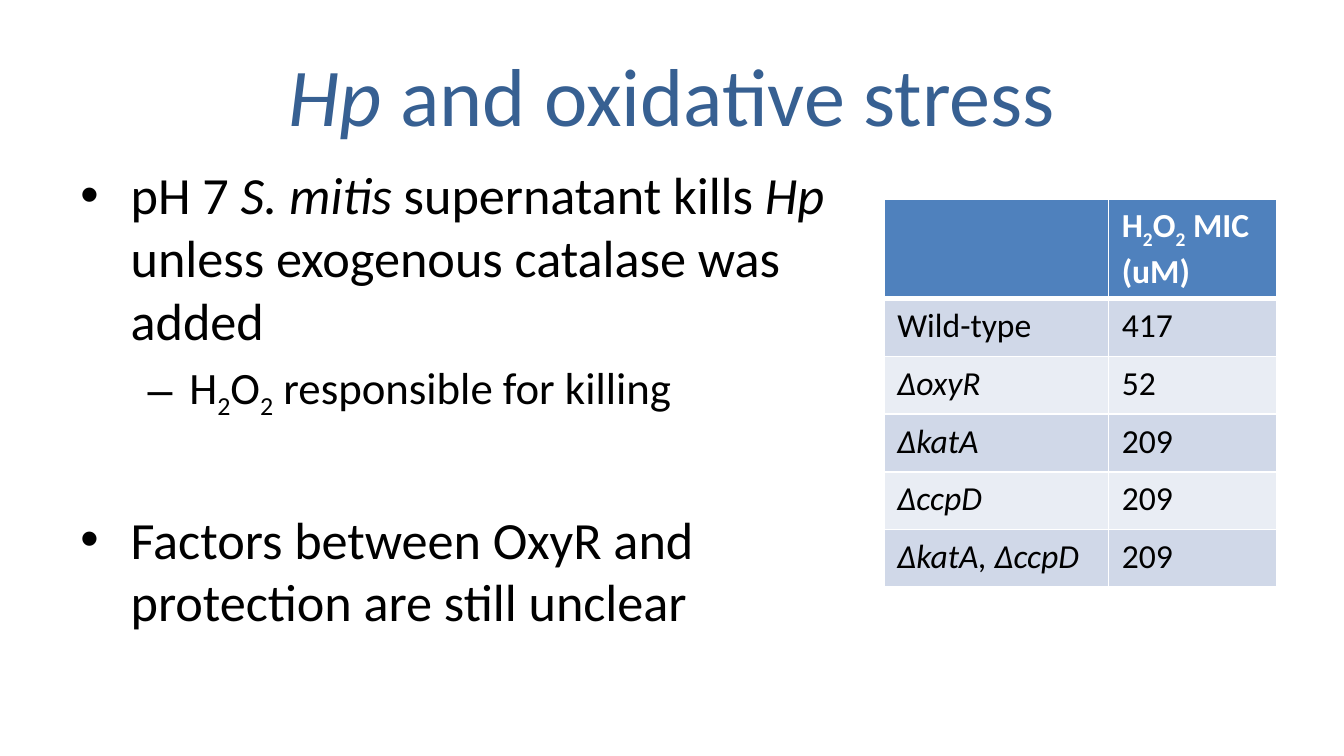
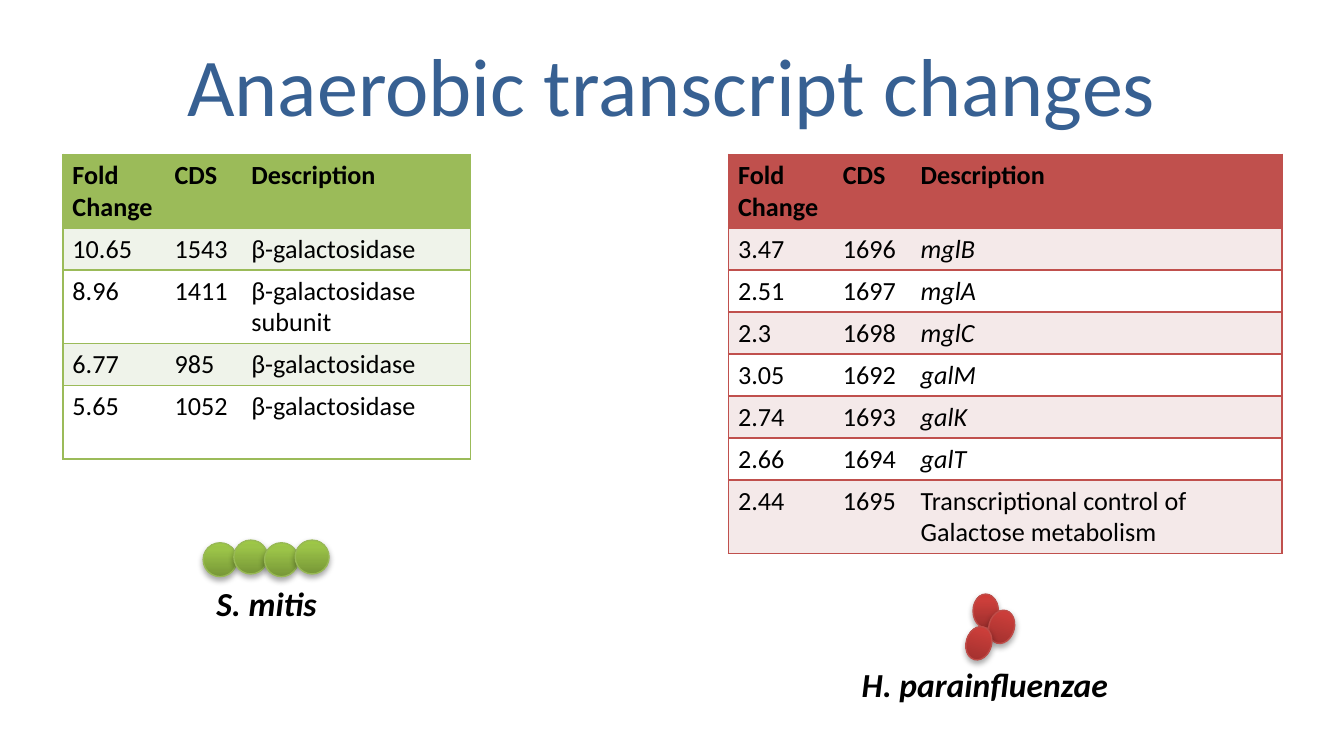
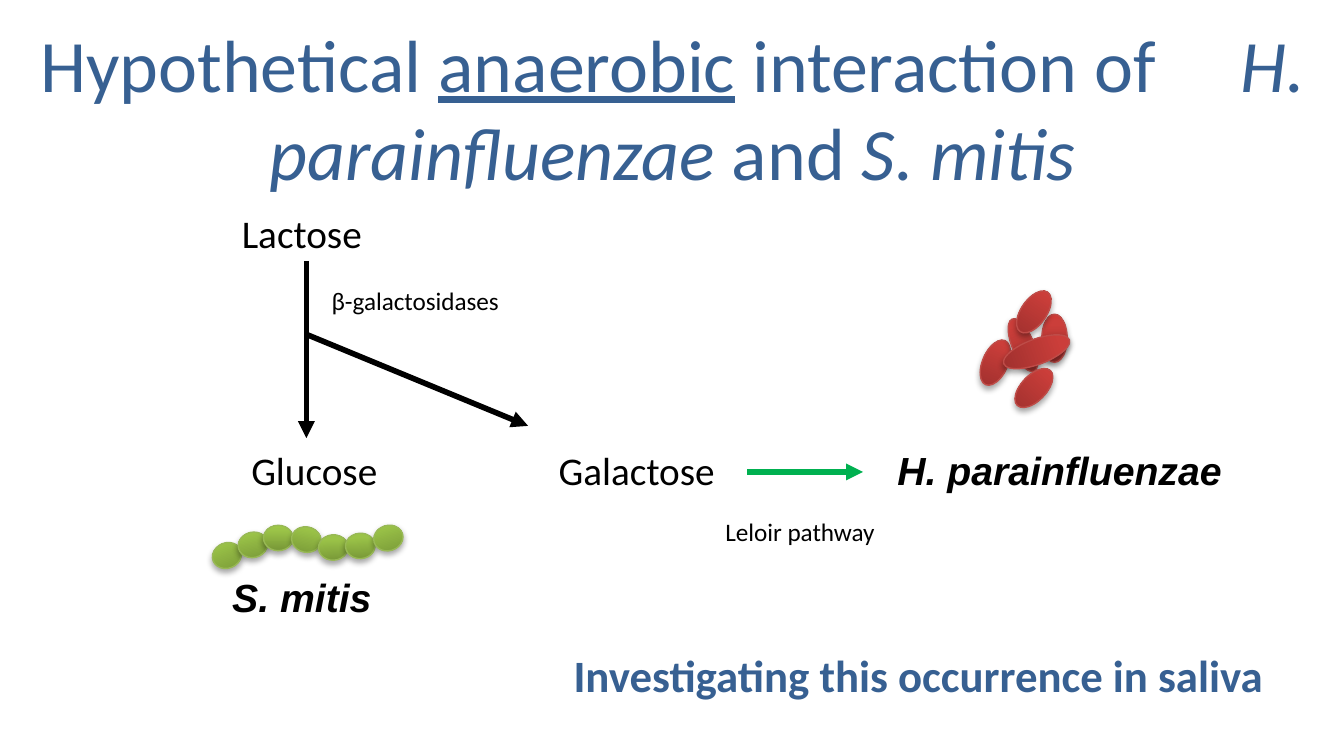
from lxml import etree
from pptx import Presentation
from pptx.dml.color import RGBColor
from pptx.enum.shapes import MSO_CONNECTOR as Connector, MSO_SHAPE as Shape
from pptx.enum.text import MSO_ANCHOR as Anchor, PP_ALIGN as Align
from pptx.oxml import parse_xml
from pptx.oxml.ns import nsdecls, qn
from pptx.util import Cm, Pt

COLORS = {
    "title": "376092", "text": "000000", "white": "FFFFFF", "arrow": "00B050",
    "blue": "4F81BD", "blue_odd": "D0D8E8", "blue_even": "E9EDF4",
    "green": "9BBB59", "green_odd": "EFF3EA",
    "red": "C0504D", "red_odd": "F4E9E9",
}
CELL_PAINT = {
    "green": {"stops": [(0, "779737"), (80, "9BC348"), (100, "9DC746")], "line": "98B955"},
    "red": {"stops": [(0, "9C2F2D"), (80, "CB3E3A"), (100, "CE3B37")], "line": "BF4C48"},
}
SHADOW = (
    f'<a:effectLst {nsdecls("a")}><a:outerShdw blurRad="40000" dist="23000" dir="5400000" '
    'rotWithShape="0"><a:srgbClr val="000000"><a:alpha val="35000"/></a:srgbClr>'
    '</a:outerShdw></a:effectLst>'
)
SUBSCRIPT, WIDE_SPACE = "s", "w"
PEROXIDE = [("H", ""), ("2", SUBSCRIPT), ("O", ""), ("2", SUBSCRIPT)]

STRESS_TITLE = [("Hp ", "i"), ("and oxidative stress", "")]
STRESS_POINTS = [
    {"bullet": "•", "indent": 0.95, "hang": 0.95, "size": 28, "before": 5.6, "runs": [
        ("pH 7 ", ""), ("S. mitis ", "i"), ("supernatant kills ", ""), ("Hp ", "i"),
        ("unless exogenous catalase was added", "")]},
    {"bullet": "–", "indent": 2.06, "hang": 0.79, "size": 24, "before": 4.8,
     "runs": PEROXIDE + [(" responsible for killing", "")]},
    {"bullet": "•", "indent": 0.95, "hang": 0.95, "size": 28, "before": 46, "runs": [
        ("Factors between OxyR and protection are still unclear", "")]},
]
MIC_ROWS = [
    ["", PEROXIDE + [(" MIC (uM)", "")]],
    ["Wild-type", "417"],
    [[("ΔoxyR", "i")], "52"],
    [[("ΔkatA", "i")], "209"],
    [[("ΔccpD", "i")], "209"],
    [[("ΔkatA, ΔccpD", "i")], "209"],
]

TRANSCRIPT_TITLE = "Anaerobic transcript changes"
TRANSCRIPT_HEADER = ["Fold Change", "CDS", "Description"]
MITIS_ROWS = [
    TRANSCRIPT_HEADER,
    ["10.65", "1543", "β-galactosidase"],
    ["8.96", "1411", "β-galactosidase\nsubunit"],
    ["6.77", "985", "β-galactosidase"],
    ["5.65", "1052", "β-galactosidase"],
]
GENES = [
    ("3.47", "1696", "mglB"), ("2.51", "1697", "mglA"), ("2.3", "1698", "mglC"),
    ("3.05", "1692", "galM"), ("2.74", "1693", "galK"), ("2.66", "1694", "galT"),
]
PARA_ROWS = [
    TRANSCRIPT_HEADER,
    *[[fold, cds, [(gene, "i")]] for fold, cds, gene in GENES],
    ["2.44", "1695", "Transcriptional control of Galactose metabolism"],
]
TRANSCRIPT_CLUSTERS = [
    ("green", (0.64, 0.64), [(3.84 + 0.58 * i, 10.21 if i % 2 else 10.26, 0) for i in range(4)]),
    ("red", (0.48, 0.64), [(18.39, 11.23, 0), (18.69, 11.53, 15.8), (18.26, 11.84, 15.8)]),
]
TRANSCRIPT_LABELS = [
    ("S. mitis", (3.84, 10.9, 2.44, 1.02), {}),
    ("H. parainfluenzae", (16, 12.42, 5.23, 1.02), {"align": Align.CENTER}),
]

PATHWAY_TITLE = [
    ("Hypothetical ", ""), ("anaerobic", "u"), (" interaction of", ""), (" ", WIDE_SPACE),
    ("H. parainfluenzae ", "i"), ("and ", ""), ("S. mitis", "i"),
]
PATHWAY_CLUSTERS = [
    ("green", (0.56, 0.48), [
        (4.01, 10.26, 338.3), (4.5, 10.06, 346.8), (4.98, 9.93, 0), (5.51, 9.96, 12),
        (6.02, 10.11, 357), (6.53, 10.08, 357), (7.06, 9.93, 342.9)]),
    ("red", (0.48, 0.91), [
        (18.57, 6.4, 23.7), (19.13, 5.99, 337.3, 0.41, 1.07), (19.69, 5.94, 0),
        (19.35, 5.99, 69.8, 0.48, 1.32), (19.3, 6.88, 43.5), (19.3, 5.44, 34.9)]),
]
SPECIES = [
    ("S. mitis", (4.14, 10.72, 3.18, 1.14)),
    ("H. parainfluenzae", (16.71, 8.31, 6.71, 1.14)),
]
SUGARS = [
    ("Lactose", (4.32, 3.84, 10, 1.14)),
    ("Galactose", (10.31, 8.31, 6.71, 1.14)),
    ("Glucose", (4.5, 8.31, 3.94, 1.14)),
]
STEPS = [
    ("β-galactosidases", (6.02, 5.26, 4.55, 0.84)),
    ("Leloir pathway", (13.46, 9.63, 3.51, 0.84)),
]
CONCLUSION = ("Investigating this occurrence in saliva", (10.59, 12.12, 13.69, 1.27))
ARROWS = [
    ((5.79, 4.93), (5.79, 8.28), "text"),
    ((14.12, 8.92), (16.31, 8.92), "arrow"),
    ((5.79, 6.32), (9.98, 8.05), "text"),
]


def cm(*values):
    return [Cm(value) for value in values]


def rgb(name):
    return RGBColor.from_string(COLORS[name])


def write(para, runs, size, color="text", font="Calibri", style=""):
    if isinstance(runs, str):
        runs = [(runs, "")]
    for text, run_style in runs:
        span = para.add_run()
        span.text = text
        marks = style + run_style
        span.font.name, span.font.size = font, Pt(size)
        span.font.color.rgb = rgb(color)
        span.font.bold, span.font.italic = "b" in marks, "i" in marks
        span.font.underline = "u" in marks
        if SUBSCRIPT in marks:
            span._r.get_or_add_rPr().set("baseline", "-25000")
        if WIDE_SPACE in marks:
            span._r.get_or_add_rPr().set("spc", "3600")


def add_label(page, text, place, size=18, wrap=True, align=Align.LEFT, anchor=Anchor.TOP, **look):
    frame = page.shapes.add_textbox(*cm(*place)).text_frame
    frame.word_wrap, frame.vertical_anchor = wrap, anchor
    para = frame.paragraphs[0]
    para.alignment = align
    write(para, text, size, **look)


def add_page(deck, title, place, size=44):
    page = deck.slides.add_slide(deck.slide_layouts[6])
    add_label(page, title, place, size, align=Align.CENTER, anchor=Anchor.MIDDLE, color="title")
    return page


def add_points(page, points, place):
    frame = page.shapes.add_textbox(*cm(*place)).text_frame
    frame.word_wrap = True
    for index, point in enumerate(points):
        para = frame.add_paragraph() if index else frame.paragraphs[0]
        para.space_before = Pt(point["before"])
        write(para, point["runs"], point["size"])
        props = para._p.get_or_add_pPr()
        props.set("marL", str(Cm(point["indent"])))
        props.set("indent", str(-Cm(point["hang"])))
        etree.SubElement(props, qn("a:buFont")).set("typeface", "Arial")
        etree.SubElement(props, qn("a:buChar")).set("char", point["bullet"])


def set_borders(cell, edges):
    props = cell._tc.get_or_add_tcPr()
    for index, side in enumerate("LRTB"):
        color, width = edges[side]
        paint = f'<a:solidFill><a:srgbClr val="{COLORS[color]}"/></a:solidFill>' if color else "<a:noFill/>"
        props.insert(index, parse_xml(
            f'<a:ln{side} {nsdecls("a")} w="{Pt(width)}">{paint}</a:ln{side}>'))


def add_grid(page, rows, corner, widths, heights, size, fills, header_color, edges_at, margins):
    table = page.shapes.add_table(
        len(rows), len(widths), *cm(*corner, sum(widths), sum(heights))).table
    for column, width in zip(table.columns, widths):
        column.width = Cm(width)
    for r, (row, height) in enumerate(zip(rows, heights)):
        table.rows[r].height = Cm(height)
        for c, content in enumerate(row):
            cell = table.cell(r, c)
            cell.margin_left = cell.margin_right = Cm(margins[0])
            cell.margin_top = cell.margin_bottom = Cm(margins[1])
            cell.fill.solid()
            cell.fill.fore_color.rgb = rgb(fills[0] if r == 0 else fills[2 - r % 2])
            set_borders(cell, edges_at(r, c))
            lines = content.split("\n") if isinstance(content, str) else [content]
            for index, line in enumerate(lines):
                para = cell.text_frame.add_paragraph() if index else cell.text_frame.paragraphs[0]
                if line:
                    write(para, line, size, header_color if r == 0 else "text",
                          style="" if r else "b")


def mic_edges(r, c):
    thin, thick = ("white", 1), ("white", 3)
    return {"L": thin, "R": thin, "T": thick if r == 1 else thin, "B": thin if r else thick}


def add_transcripts(page, rows, corner, widths, color, tall_rows):
    line, clear = (color, 1), (None, 1)

    def edges(r, c):
        return {"L": clear if c else line, "R": line if c == len(widths) - 1 else clear,
                "T": line, "B": line}

    heights = [1.39 if r in tall_rows else 0.79 for r in range(len(rows))]
    add_grid(page, rows, corner, widths, heights, 14, (color, color + "_odd", "white"),
             "text", edges, (0.18, 0.1))


def add_cluster(page, color, size, members):
    group = page.shapes.add_group_shape()
    paint = CELL_PAINT[color]
    stops = "".join(f'<a:gs pos="{pos * 1000}"><a:srgbClr val="{shade}"/></a:gs>'
                    for pos, shade in paint["stops"])
    for left, top, turn, *own_size in members:
        oval = group.shapes.add_shape(Shape.OVAL, *cm(left, top, *(own_size or size)))
        oval.rotation = turn
        oval.line.color.rgb = RGBColor.from_string(paint["line"])
        oval.line.width = Pt(0.75)
        props = oval._element.spPr
        props.find(qn("a:prstGeom")).addnext(parse_xml(
            f'<a:gradFill {nsdecls("a")} rotWithShape="1"><a:gsLst>{stops}</a:gsLst>'
            '<a:lin ang="16200000" scaled="0"/></a:gradFill>'))
        props.append(parse_xml(SHADOW))


def add_arrow(page, start, end, color):
    arrow = page.shapes.add_connector(Connector.STRAIGHT, *cm(*start, *end))
    arrow.line.color.rgb = rgb(color)
    arrow.line.width = Pt(3)
    etree.SubElement(arrow.line._get_or_add_ln(), qn("a:tailEnd")).set("type", "triangle")
    etree.SubElement(arrow._element.spPr, qn("a:effectLst"))


def build_stress(deck):
    page = add_page(deck, STRESS_TITLE, (1.27, 0.58, 22.86, 2.39))
    add_grid(page, MIC_ROWS, (16.71, 3.76), (4.24, 3.18), [1.09] * len(MIC_ROWS), 18,
             ("blue", "blue_odd", "blue_even"), "white", mic_edges, (0.25, 0.13))
    add_points(page, STRESS_POINTS, (1.27, 2.95, 15.04, 9.53))


def build_transcripts(deck):
    page = add_page(deck, TRANSCRIPT_TITLE, (1.27, 0.38, 22.86, 2.39))
    add_transcripts(page, MITIS_ROWS, (1.19, 2.92), (1.93, 1.45, 4.32), "green", (0, 2, 4))
    add_transcripts(page, PARA_ROWS, (13.77, 2.92), (1.98, 1.47, 7.01), "red", (0, 7))
    for cluster in TRANSCRIPT_CLUSTERS:
        add_cluster(page, *cluster)
    for text, place, options in TRANSCRIPT_LABELS:
        add_label(page, text, place, wrap=False, style="bi", **options)


def build_pathway(deck):
    page = add_page(deck, PATHWAY_TITLE, (0.43, 0.64, 24.56, 2.77), 39.6)
    for cluster in PATHWAY_CLUSTERS:
        add_cluster(page, *cluster)
    for text, place in SPECIES:
        add_label(page, text, place, 21, wrap=False, font="Arial", style="bi")
    for text, place in SUGARS:
        add_label(page, text, place, 21)
    for arrow in ARROWS:
        add_arrow(page, *arrow)
    for text, place in STEPS:
        add_label(page, text, place, 13.5)
    add_label(page, *CONCLUSION, 24, wrap=False, color="title", style="b")


def main():
    deck = Presentation()
    deck.slide_width, deck.slide_height = cm(25.4, 14.29)
    build_stress(deck)
    build_transcripts(deck)
    build_pathway(deck)
    deck.save("out.pptx")


if __name__ == "__main__":
    main()
